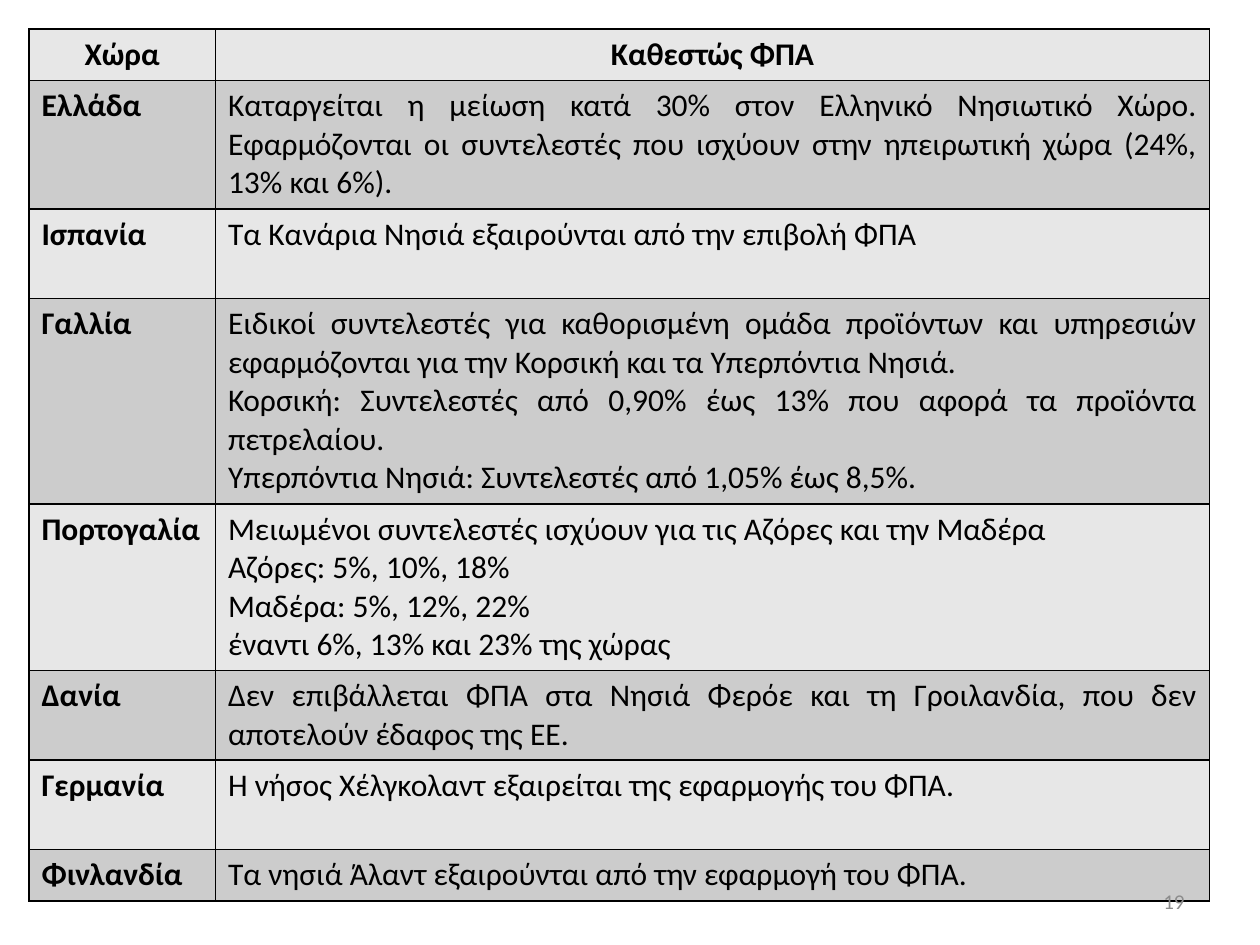
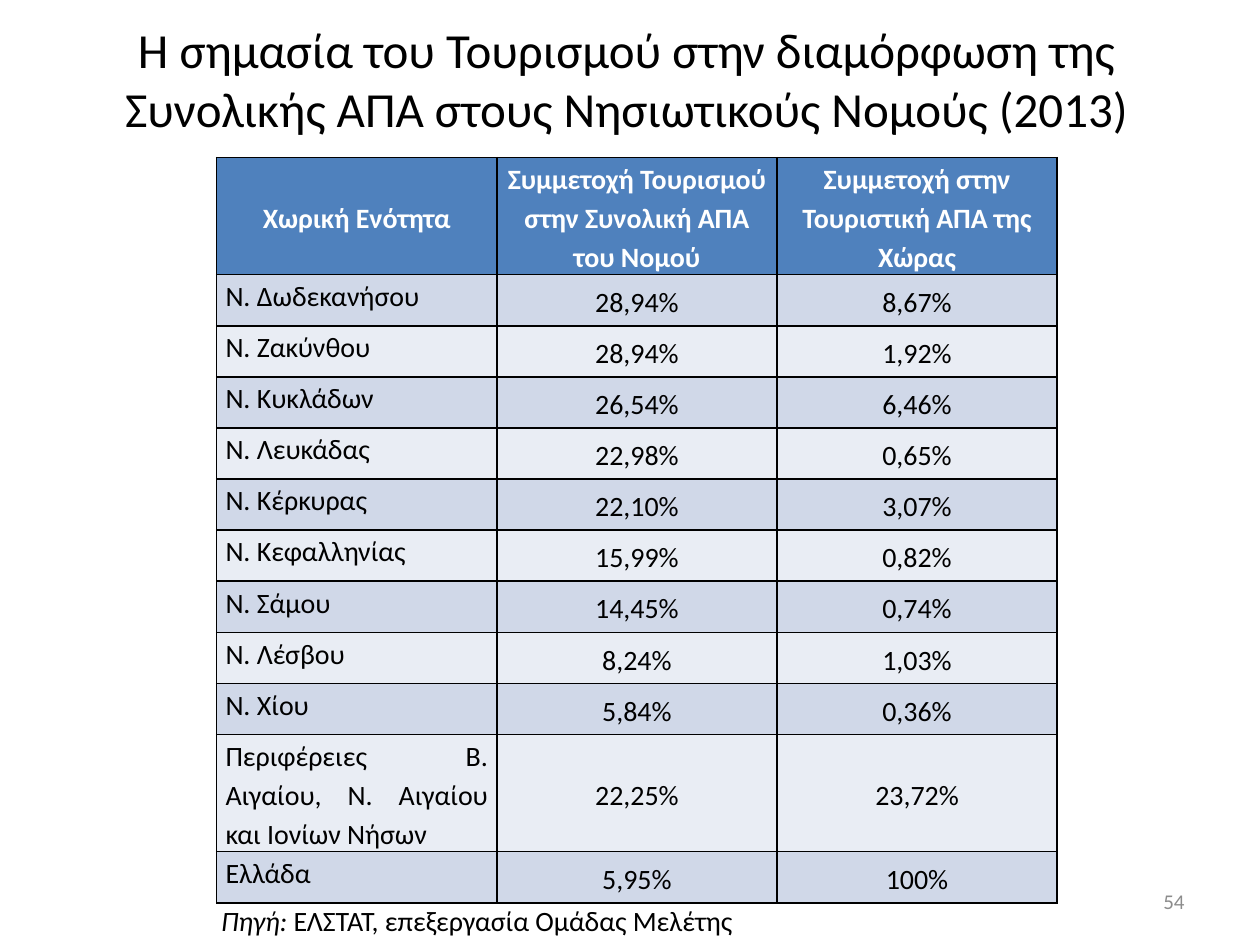
from dataclasses import dataclass

from lxml.etree import SubElement
from pptx import Presentation
from pptx.dml.color import RGBColor
from pptx.enum.text import MSO_ANCHOR, PP_ALIGN
from pptx.oxml.ns import qn
from pptx.slide import Slide
from pptx.table import _Cell
from pptx.util import Inches, Pt

# Shared look
FONT = "Calibri"
BLACK = RGBColor(0x00, 0x00, 0x00)
WHITE = RGBColor(0xFF, 0xFF, 0xFF)
NUMBER_GRAY = RGBColor(0x8C, 0x8C, 0x8C)
LIGHT_GRAY = RGBColor(0xE7, 0xE7, 0xE7)
DARK_GRAY = RGBColor(0xCC, 0xCC, 0xCC)
HEADER_BLUE = RGBColor(0x4F, 0x81, 0xBD)
LIGHT_BLUE = RGBColor(0xE9, 0xED, 0xF4)
DARK_BLUE = RGBColor(0xD0, 0xD8, 0xE8)

TITLE_ONLY, BLANK = 5, 6


@dataclass(frozen=True)
class Area:
    left: float
    top: float
    width: float
    height: float

    def lengths(self) -> tuple:
        return tuple(map(Inches, (self.left, self.top, self.width, self.height)))


@dataclass(frozen=True)
class TextStyle:
    size: int
    color: RGBColor = BLACK
    bold: bool = False
    align: PP_ALIGN = PP_ALIGN.CENTER
    anchor: MSO_ANCHOR = MSO_ANCHOR.MIDDLE
    spacing: float = 1.0


@dataclass(frozen=True)
class TableStyle:
    header: TextStyle
    first_column: TextStyle
    other_columns: TextStyle
    header_fill: RGBColor
    odd_fill: RGBColor
    even_fill: RGBColor
    side_margin: float
    end_margin: float


VAT_HEAD = TextStyle(18, bold=True, anchor=MSO_ANCHOR.TOP)
VAT_STYLE = TableStyle(
    header=VAT_HEAD,
    first_column=TextStyle(18, bold=True, align=PP_ALIGN.LEFT, anchor=MSO_ANCHOR.TOP),
    other_columns=TextStyle(18, align=PP_ALIGN.JUSTIFY, anchor=MSO_ANCHOR.TOP),
    header_fill=LIGHT_GRAY, odd_fill=DARK_GRAY, even_fill=LIGHT_GRAY,
    side_margin=0.1, end_margin=0.05)
TOURISM_STYLE = TableStyle(
    header=TextStyle(16, WHITE, bold=True, spacing=1.15),
    first_column=TextStyle(16, align=PP_ALIGN.JUSTIFY, anchor=MSO_ANCHOR.TOP, spacing=1.15),
    other_columns=TextStyle(16, spacing=1.15),
    header_fill=HEADER_BLUE, odd_fill=DARK_BLUE, even_fill=LIGHT_BLUE,
    side_margin=0.07, end_margin=0)

TITLE_STYLE = TextStyle(28)
NUMBER_STYLE = TextStyle(12, NUMBER_GRAY, align=PP_ALIGN.RIGHT)
SOURCE_STYLE = TextStyle(16)
TITLE_AREA = Area(0.47, 0, 9, 1.25)
NUMBER_AREA = Area(7.17, 6.95, 2.33, 0.4)
SOURCE_AREA = Area(1.56, 7.11, 4.45, 0.39)

# Table contents
VAT_ROWS = [
    ("Χώρα", "Καθεστώς ΦΠΑ"),
    ("Ελλάδα", "Καταργείται η μείωση κατά 30% στον Ελληνικό Νησιωτικό Χώρο. "
               "Εφαρμόζονται οι συντελεστές που ισχύουν στην ηπειρωτική χώρα "
               "(24%, 13% και 6%)."),
    ("Ισπανία", "Τα Κανάρια Νησιά εξαιρούνται από την επιβολή ΦΠΑ"),
    ("Γαλλία", "Ειδικοί συντελεστές για καθορισμένη ομάδα προϊόντων και υπηρεσιών "
               "εφαρμόζονται για την Κορσική και τα Υπερπόντια Νησιά.\n"
               "Κορσική: Συντελεστές από 0,90% έως 13% που αφορά τα προϊόντα πετρελαίου.\n"
               "Υπερπόντια Νησιά: Συντελεστές από 1,05% έως 8,5%."),
    ("Πορτογαλία", "Μειωμένοι συντελεστές ισχύουν για τις Αζόρες και την Μαδέρα\n"
                   "Αζόρες: 5%, 10%, 18%\n"
                   "Μαδέρα: 5%, 12%, 22%\n"
                   "έναντι 6%, 13% και 23% της χώρας"),
    ("Δανία", "Δεν επιβάλλεται ΦΠΑ στα Νησιά Φερόε και τη Γροιλανδία, "
              "που δεν αποτελούν έδαφος της ΕΕ."),
    ("Γερμανία", "Η νήσος Χέλγκολαντ εξαιρείται της εφαρμογής του ΦΠΑ."),
    ("Φινλανδία", "Τα νησιά Άλαντ εξαιρούνται από την εφαρμογή του ΦΠΑ."),
]
VAT_HEIGHTS = [0.41, 1.02, 0.71, 1.63, 1.32, 0.71, 0.71, 0.41]

TOURISM_ROWS = [
    ("Χωρική Ενότητα", "Συμμετοχή Τουρισμού στην Συνολική ΑΠΑ του Νομού",
     "Συμμετοχή στην Τουριστική ΑΠΑ της Χώρας"),
    ("Ν. Δωδεκανήσου", "28,94%", "8,67%"),
    ("Ν. Ζακύνθου", "28,94%", "1,92%"),
    ("Ν. Κυκλάδων", "26,54%", "6,46%"),
    ("Ν. Λευκάδας", "22,98%", "0,65%"),
    ("Ν. Κέρκυρας", "22,10%", "3,07%"),
    ("Ν. Κεφαλληνίας", "15,99%", "0,82%"),
    ("Ν. Σάμου", "14,45%", "0,74%"),
    ("Ν. Λέσβου", "8,24%", "1,03%"),
    ("Ν. Χίου", "5,84%", "0,36%"),
    ("Περιφέρειες Β. Αιγαίου, Ν. Αιγαίου και Ιονίων Νήσων", "22,25%", "23,72%"),
    ("Ελλάδα", "5,95%", "100%"),
]
SINGLE_LINE = 3.65 / 9  # nine prefecture rows share 3.65 inches
THREE_LINES = 0.93
TOURISM_HEIGHTS = [THREE_LINES, *[SINGLE_LINE] * 9, THREE_LINES, SINGLE_LINE]


def format_text(frame, style: TextStyle) -> None:
    """Apply one style to every paragraph and run of a text frame."""
    for para in frame.paragraphs:
        para.alignment = style.align
        para.line_spacing = style.spacing
        for span in para.runs:
            span.font.name = FONT
            span.font.size = Pt(style.size)
            span.font.bold = style.bold
            span.font.color.rgb = style.color


def add_borders(cell: _Cell) -> None:
    properties = cell._tc.get_or_add_tcPr()
    for side in ("a:lnL", "a:lnR", "a:lnT", "a:lnB"):
        line = SubElement(properties, qn(side), w=str(Pt(1)))
        fill = SubElement(line, qn("a:solidFill"))
        SubElement(fill, qn("a:srgbClr"), val=str(BLACK))


def fill_cell(cell: _Cell, text: str, style: TextStyle, fill: RGBColor,
              table_style: TableStyle) -> None:
    cell.text_frame.text = text
    format_text(cell.text_frame, style)
    cell.vertical_anchor = style.anchor
    cell.margin_left = cell.margin_right = Inches(table_style.side_margin)
    cell.margin_top = cell.margin_bottom = Inches(table_style.end_margin)
    add_borders(cell)
    cell.fill.solid()
    cell.fill.fore_color.rgb = fill


def add_grid(page: Slide, left: float, top: float, widths: list[float],
             heights: list[float], rows: list[tuple], style: TableStyle) -> None:
    area = Area(left, top, sum(widths), sum(heights))
    table = page.shapes.add_table(len(rows), len(widths), *area.lengths()).table
    table.first_row = table.horz_banding = False
    for column, width in zip(table.columns, widths):
        column.width = Inches(width)
    for row_index, (row, height) in enumerate(zip(rows, heights)):
        table.rows[row_index].height = Inches(height)
        for column_index, text in enumerate(row):
            if row_index == 0:
                text_style, fill = style.header, style.header_fill
            else:
                text_style = style.other_columns if column_index else style.first_column
                fill = style.odd_fill if row_index % 2 else style.even_fill
            fill_cell(table.cell(row_index, column_index), text, text_style, fill, style)


def add_label(page: Slide, area: Area, parts: list[str], style: TextStyle) -> list:
    """Add a text box with one run per part and return the runs."""
    frame = page.shapes.add_textbox(*area.lengths()).text_frame
    frame.word_wrap = True
    frame.vertical_anchor = style.anchor
    para = frame.paragraphs[0]
    for part in parts:
        para.add_run().text = part
    format_text(frame, style)
    return list(para.runs)


def set_title(page: Slide, text: str) -> None:
    title = page.shapes.title
    title.left, title.top, title.width, title.height = TITLE_AREA.lengths()
    title.text_frame.text = text
    title.text_frame.vertical_anchor = TITLE_STYLE.anchor
    format_text(title.text_frame, TITLE_STYLE)


def build_vat_page(deck) -> None:
    page = deck.slides.add_slide(deck.slide_layouts[BLANK])
    add_grid(page, 0.23, 0.23, [1.48, 7.89], VAT_HEIGHTS, VAT_ROWS, VAT_STYLE)
    add_label(page, NUMBER_AREA, ["19"], NUMBER_STYLE)


def build_tourism_page(deck) -> None:
    page = deck.slides.add_slide(deck.slide_layouts[TITLE_ONLY])
    set_title(page, "Η σημασία του Τουρισμού στην διαμόρφωση της Συνολικής ΑΠΑ "
                    "στους Νησιωτικούς Νομούς (2013)")
    add_label(page, NUMBER_AREA, ["54"], NUMBER_STYLE)
    add_grid(page, 1.72, 1.25, [6.67 / 3] * 3, TOURISM_HEIGHTS, TOURISM_ROWS, TOURISM_STYLE)
    source = add_label(page, SOURCE_AREA,
                       ["Πηγή:", " ΕΛΣΤΑΤ, επεξεργασία Ομάδας Μελέτης"], SOURCE_STYLE)
    source[0].font.italic = True


def main() -> None:
    deck = Presentation()
    deck.slide_width, deck.slide_height = Inches(10), Inches(7.5)
    build_vat_page(deck)
    build_tourism_page(deck)
    deck.save("out.pptx")


if __name__ == "__main__":
    main()
